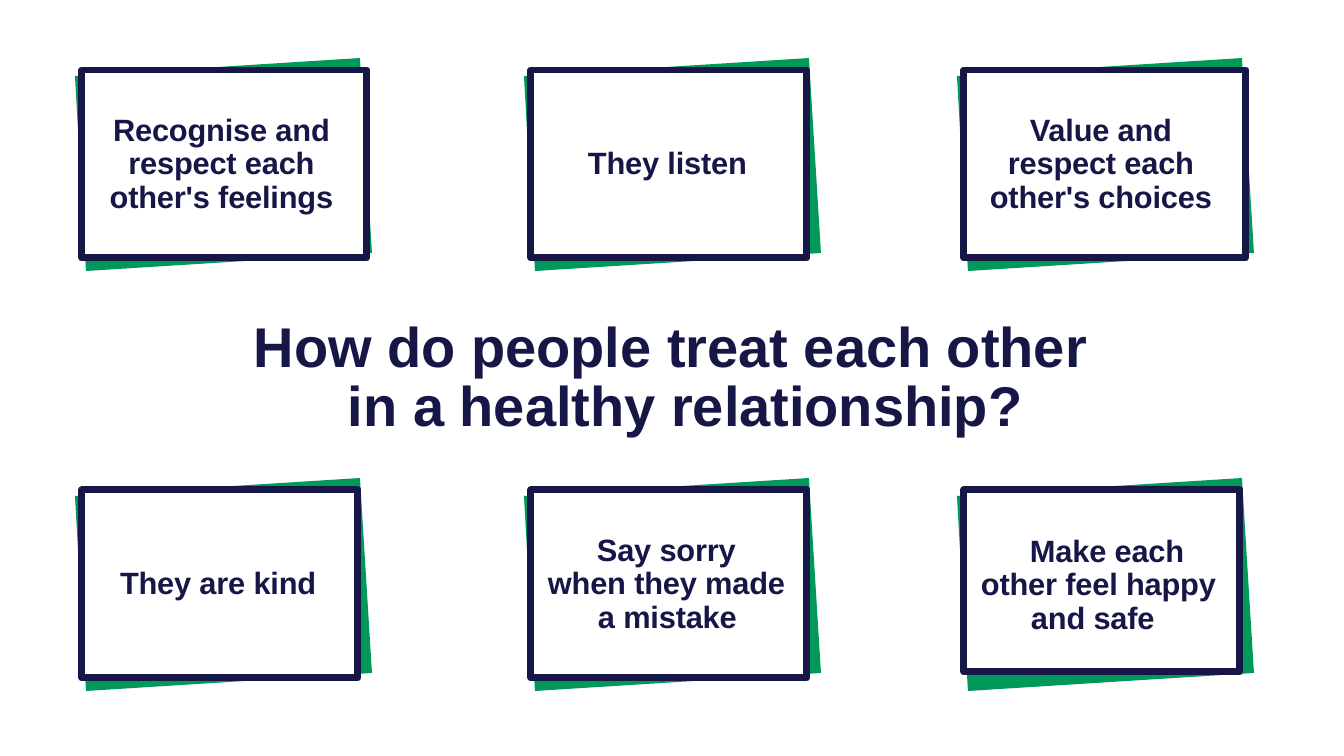
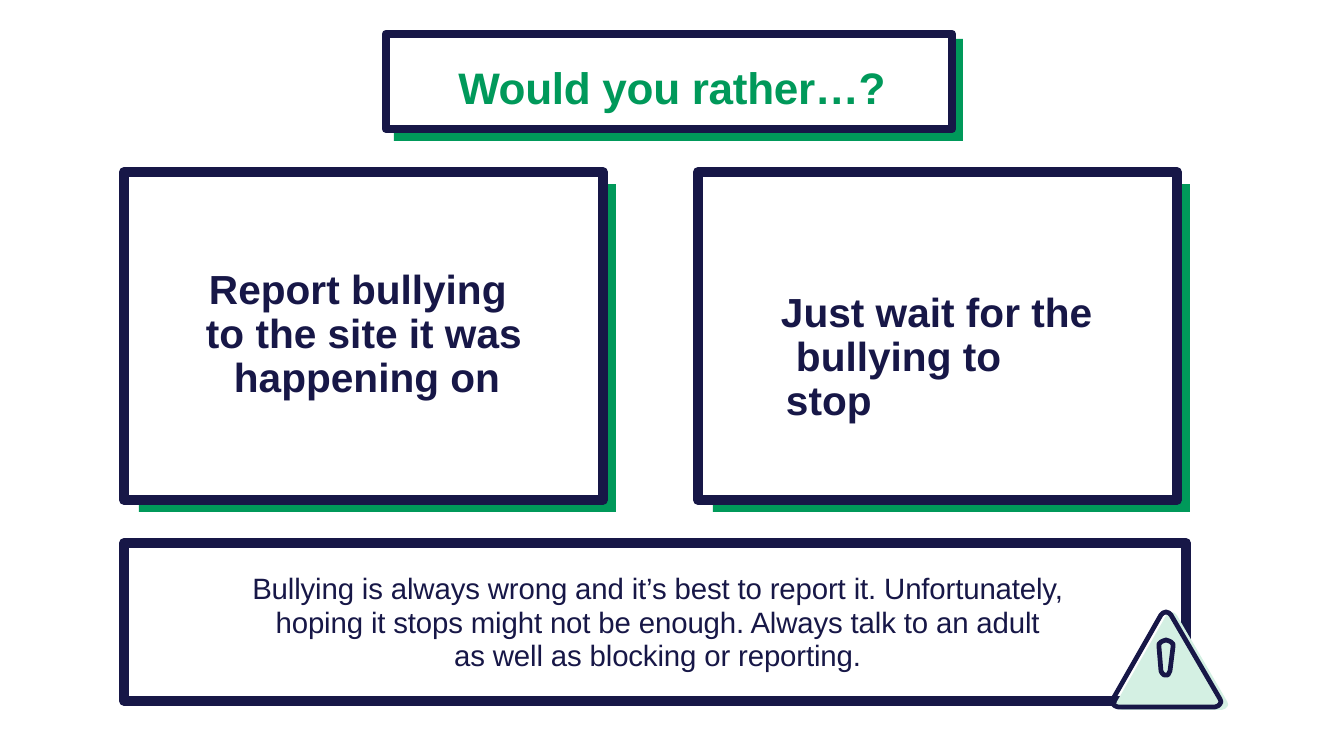
import pptx
import pptx.dml.color
import pptx.enum.shapes
import pptx.enum.text
import pptx.oxml.ns
import pptx.util
from lxml import etree

# Shared style
NAVY, GREEN, MINT, WHITE = "171747", "00995A", "D4F0E3", "FFFFFF"
FONT = "Arial"
EMU_PER_PX = 914400 / 100.8
ALIGN = pptx.enum.text.PP_ALIGN
ANCHOR = pptx.enum.text.MSO_ANCHOR

# Green sheet behind each card, measured from the card's corner
TILTED_SHEET = [(278, -12), (-7, 6), (4, 201), (290, 183)]

# Warning sign, measured from its own corner
SIGN = [(108, 87), (59, 3), (57, 1), (54, 0), (51, 1), (49, 3), (1, 87), (0, 90),
        (1, 92), (3, 94), (6, 95), (103, 95), (106, 94), (108, 92), (109, 90)]
MARK = [(14, 7), (11, 31), (9, 35), (7, 35), (5, 35), (3, 33), (2, 31), (0, 7),
        (0, 4), (2, 2), (4, 1), (7, 0), (10, 1), (12, 2), (14, 4)]

COLUMNS, ROWS = (82, 531, 964), (70, 490)


def px(n):
    return pptx.util.Emu(round(n * EMU_PER_PX))


def rgb(color):
    return pptx.dml.color.RGBColor.from_string(color)


def paint(sp, fill=None, line=None, width=5):
    """Set fill and round-cornered outline, without shadow."""
    sp.shadow.inherit = False
    if fill:
        sp.fill.solid()
        sp.fill.fore_color.rgb = rgb(fill)
    else:
        sp.fill.background()
    if line:
        sp.line.color.rgb = rgb(line)
        sp.line.width = pptx.util.Pt(width)
        etree.SubElement(sp.line._get_or_add_ln(), pptx.oxml.ns.qn("a:round"))
    else:
        sp.line.fill.background()
    return sp


def rect(s, x, y, w, h, **style):
    kind = pptx.enum.shapes.MSO_SHAPE.RECTANGLE
    return paint(s.shapes.add_shape(kind, px(x), px(y), px(w), px(h)), **style)


def outline(s, x, y, points, scale=1, **style):
    pts = [(px(x + a * scale), px(y + b * scale)) for a, b in points]
    fb = s.shapes.build_freeform(*pts[0], scale=1.0)
    fb.add_line_segments(pts[1:], close=True)
    return paint(fb.convert_to_shape(), **style)


def textbox(s, x, y, w, h):
    return s.shapes.add_textbox(px(x), px(y), px(w), px(h))


def write(sp, paras, size=22, color=NAVY, bold=True, align=ALIGN.LEFT, leading=None,
          anchor=ANCHOR.TOP, top=0, right=0, spacing=-0.1):
    """Write paragraphs given as (text, left margin, first-line indent)."""
    tf = sp.text_frame
    tf.word_wrap = True
    tf.vertical_anchor = anchor
    tf.margin_left = tf.margin_bottom = 0
    tf.margin_top, tf.margin_right = px(top), px(right)
    for i, (text, margin, indent) in enumerate(paras):
        p = tf.add_paragraph() if i else tf.paragraphs[0]
        p.text = text
        p.alignment = align
        if leading:
            p.line_spacing = pptx.util.Pt(leading)
        pPr = p._p.get_or_add_pPr()
        pPr.set("marL", str(px(margin)))
        pPr.set("indent", str(px(indent)))
        for r in p.runs:
            r.font.name = FONT
            r.font.size = pptx.util.Pt(size)
            r.font.bold = bold
            r.font.color.rgb = rgb(color)
            r._r.get_or_add_rPr().set("spc", str(round(spacing * 100)))


def card(s, col, row, paras, w=276, h=188, **style):
    x, y = COLUMNS[col], ROWS[row]
    outline(s, x, y, TILTED_SHEET, fill=GREEN)
    sp = rect(s, x, y, w, h, fill=WHITE, line=NAVY)
    write(sp, paras, leading=24, anchor=ANCHOR.MIDDLE, **style)


def panel(s, x):
    rect(s, x + 15, 184, 477, 328, fill=GREEN)
    rect(s, x, 172, 479, 328, fill=WHITE, line=NAVY, width=7)


def treatment_slide(s):
    # Question
    write(textbox(s, 254, 310, 900, 129),
          [("How do people treat each other\vin a healthy relationship?", 94, -94)],
          size=40, leading=42, top=10, spacing=0)

    # Answers
    card(s, 0, 0, [("Recognise and\vrespect each\vother's feelings", 0, 0)],
         w=285, align=ALIGN.CENTER, right=6)
    card(s, 1, 0, [("They listen", 57, 0)])
    card(s, 2, 0, [("Value and\vrespect each\vother's choices", 0, 0)],
         w=282, align=ALIGN.CENTER, right=8)
    card(s, 0, 1, [("They are kind", 38, 0)])
    card(s, 1, 1, [("Say sorry\vwhen they made", 17, 49), ("a mistake", 67, 0)])
    card(s, 2, 1, [("Make each\vother feel happy", 17, 49), ("and safe", 67, 0)],
         h=182, top=8)


def choice_slide(s):
    # Heading
    rect(s, 394, 39, 569, 102, fill=GREEN)
    heading = rect(s, 386, 34, 566, 95, fill=WHITE, line=NAVY, width=6)
    write(heading, [("Would you rather…?", 6, 0)], size=31.5, color=GREEN,
          align=ALIGN.CENTER, top=26, spacing=-0.2)

    # Two choices
    choices = [
        (124, 204, 262, [("Report bullying\vto the site it was", 2, 3),
                         ("happening on", 30, 0)]),
        (698, 780, 285, [("Just wait for the\vbullying to", 16, -15), ("stop", 6, 0)]),
    ]
    for panel_x, x, y, paras in choices:
        panel(s, panel_x)
        write(textbox(s, x, y, 350, 140), paras, size=29, leading=31.7, top=6, spacing=0)

    # Advice
    rect(s, 124, 543, 1062, 158, line=NAVY, width=7)
    advice = ("Bullying is always wrong and it’s best to report it. Unfortunately,\v"
              "hoping it stops might not be enough. Always talk to an adult\v"
              "as well as blocking or reporting.")
    write(textbox(s, 226, 568, 863, 105), [(advice, 0, 0)], size=21, bold=False,
          align=ALIGN.CENTER, leading=24, top=4)

    # Warning sign
    outline(s, 1116, 612, SIGN, scale=1.03, fill=MINT)
    outline(s, 1112, 612, SIGN, line=NAVY, width=3.36)
    outline(s, 1159, 640, MARK, line=NAVY, width=3.36)


def main():
    prs = pptx.Presentation()
    prs.slide_width, prs.slide_height = px(1344), px(756)
    for build in (treatment_slide, choice_slide):
        build(prs.slides.add_slide(prs.slide_layouts[6]))
    prs.save("out.pptx")


if __name__ == "__main__":
    main()
